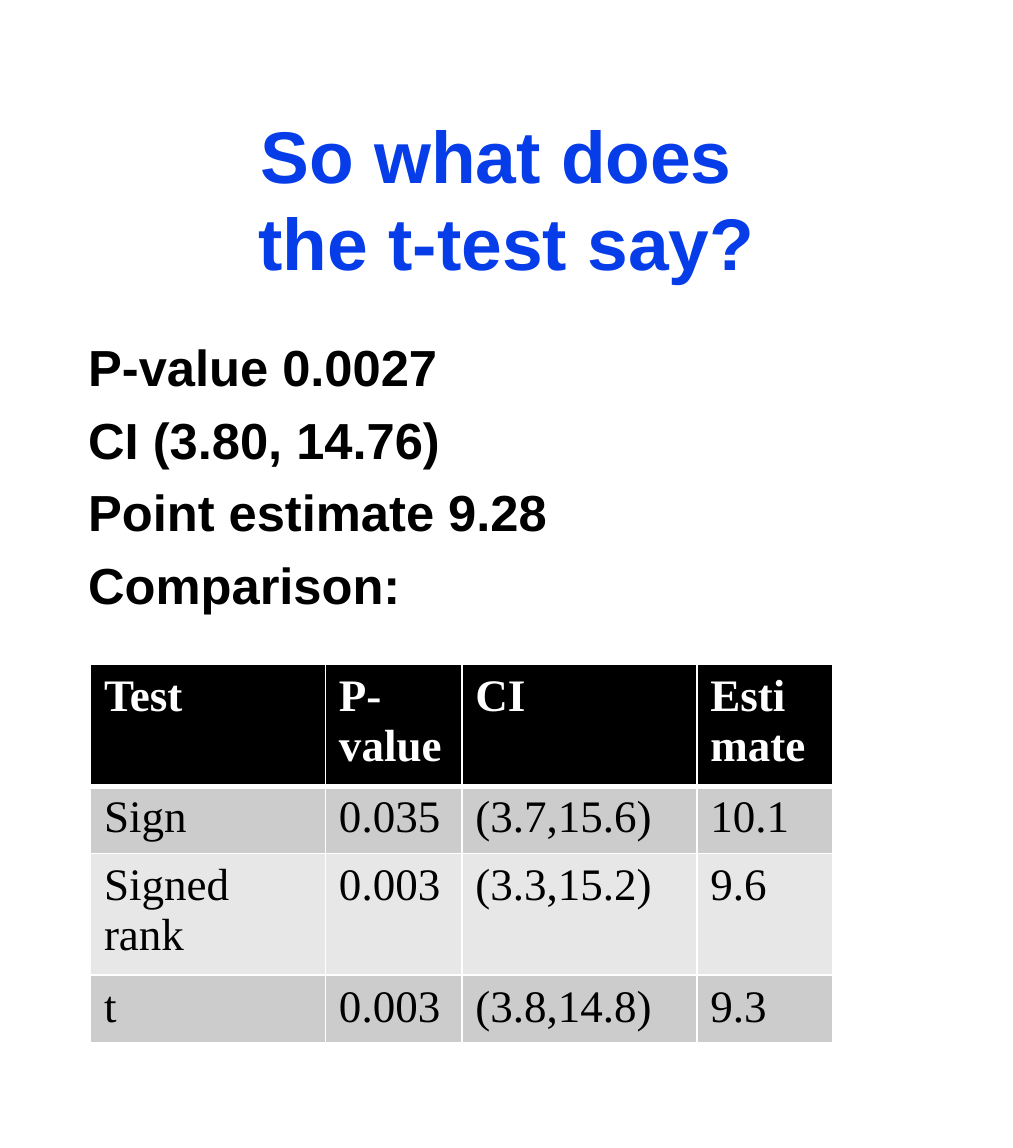
from lxml.etree import SubElement as Sub
from pptx import Presentation
from pptx.dml.color import RGBColor as Color
from pptx.enum.text import MSO_ANCHOR as Anchor, PP_ALIGN as Align
from pptx.oxml.ns import qn
from pptx.util import Inches, Pt

THEME = {
    "title": {"name": "Arial", "size": Pt(39), "bold": True, "color": "063DE8"},
    "body": {"name": "Arial", "size": Pt(27), "bold": True, "color": "000000"},
    "head": {"name": "Times New Roman", "size": Pt(24), "bold": True, "color": "FFFFFF"},
    "cell": {"name": "Times New Roman", "size": Pt(24), "bold": False, "color": "000000"},
    "head_fill": "000000",
    "bands": ["E7E7E7", "CCCCCC"],
    "border": "FFFFFF",
}


def style_text(para, style):
    for span in para.runs:
        for key, value in THEME[style].items():
            if key == "color":
                span.font.color.rgb = Color.from_string(value)
            else:
                setattr(span.font, key, value)


def add_border(cell, side, width):
    line = Sub(cell._tc.get_or_add_tcPr(), qn(f"a:{side}"), w=str(Pt(width)))
    fill = Sub(line, qn("a:solidFill"))
    Sub(fill, qn("a:srgbClr"), val=THEME["border"])


deck = Presentation()
deck.slide_width, deck.slide_height = Inches(7.5), Inches(8.5)
page = deck.slides.add_slide(deck.slide_layouts[5])
left, width = int(deck.slide_width * 0.075), int(deck.slide_width * 0.85)
frame_format = {
    "word_wrap": True,
    "margin_left": Inches(0.09), "margin_right": Inches(0.09),
    "margin_top": Inches(0.04), "margin_bottom": Inches(0.04),
}

# Title
title = page.shapes.title
title.left, title.top, title.width, title.height = left, Inches(0.76), width, Inches(1.41)
title.text_frame.text = "So what does \vthe t-test say?"
title.text_frame.vertical_anchor = Anchor.MIDDLE
title_para = title.text_frame.paragraphs[0]
title_para.alignment = Align.CENTER
style_text(title_para, "title")

# Results of the t-test
results = page.shapes.add_textbox(left, Inches(2.45), width, Inches(2.3))
results.text_frame.text = "\n".join([
    "P-value 0.0027", "CI (3.80, 14.76)", "Point estimate 9.28", "Comparison:",
])
for para in results.text_frame.paragraphs:
    para.space_before = Pt(6.2)
    style_text(para, "body")

for box in (title, results):
    for key, value in frame_format.items():
        setattr(box.text_frame, key, value)

# Comparison of the tests
rows = [
    ["Test", "P-value", "CI", "Estimate"],
    ["Sign", "0.035", "(3.7,15.6)", "10.1"],
    ["Signed rank", "0.003", "(3.3,15.2)", "9.6"],
    ["t", "0.003", "(3.8,14.8)", "9.3"],
]
column_widths = [1.74, 1.01] * 2
row_heights = [0.79] + [0.46] * 3
table = page.shapes.add_table(
    len(rows), len(column_widths), Inches(0.67), Inches(4.92),
    Inches(sum(column_widths)), Inches(sum(row_heights)),
).table
for column, inches in zip(table.columns, column_widths):
    column.width = Inches(inches)
for row, inches in zip(table.rows, row_heights):
    row.height = Inches(inches)

for r, texts in enumerate(rows):
    fill_color = THEME["bands"][r % 2] if r else THEME["head_fill"]
    for c, text in enumerate(texts):
        cell = table.cell(r, c)
        cell.text = text
        style_text(cell.text_frame.paragraphs[0], "cell" if r else "head")
        for side in ("lnL", "lnR", "lnT", "lnB"):
            heavy = (r, side) in [(0, "lnB"), (1, "lnT")]
            add_border(cell, side, 3 if heavy else 1)
        cell.fill.solid()
        cell.fill.fore_color.rgb = Color.from_string(fill_color)

deck.save("out.pptx")
